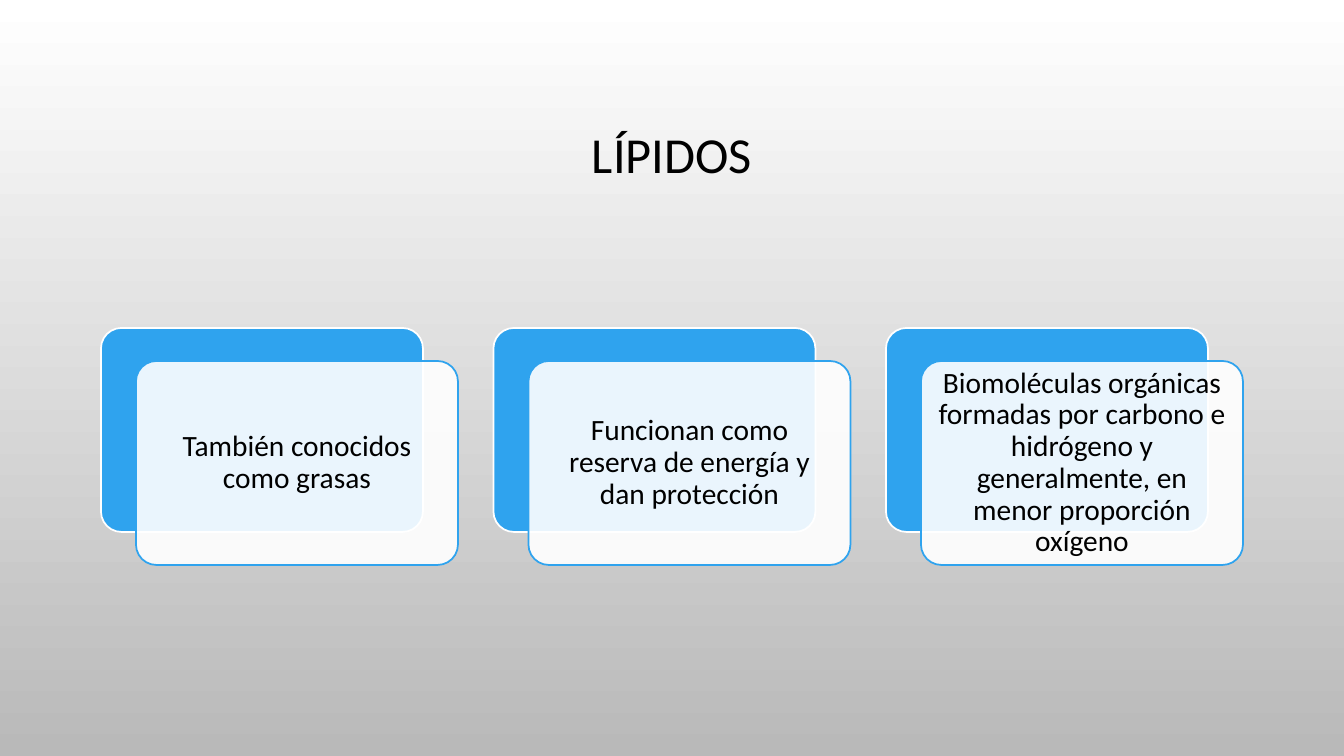
from dataclasses import dataclass

from lxml.etree import SubElement
from pptx import Presentation
from pptx.dml.color import RGBColor
from pptx.enum.shapes import MSO_SHAPE
from pptx.enum.text import MSO_ANCHOR, PP_ALIGN
from pptx.oxml.ns import qn
from pptx.util import Pt

# Content
TITLE = "LÍPIDOS"
CARDS = [
    "También conocidos como grasas",
    "Funcionan como reserva de energía y dan protección",
    "Biomoléculas orgánicas formadas por carbono e hidrógeno y "
    "generalmente, en menor proporción oxígeno",
]


@dataclass(frozen=True)
class Theme:
    font: str = "Calibri"
    title_size: int = 36
    card_size: int = 21
    text: str = "000000"
    accent: str = "2FA3EE"
    white: str = "FFFFFF"
    bg_end: str = "B9B9B9"
    line: float = 1.25
    veil: int = 90


THEME = Theme()

# Layout in px
SLIDE_W, SLIDE_H = 1344, 756
EMU_PER_PX = 12192000 / SLIDE_W
LEFT, ROW_W = 101, 1142
TITLE_TOP, TITLE_H = 69, 176
CARD_TOP, CARD_W, CARD_H = 328, 322, 204
SHIFT_X, SHIFT_Y = 35, 33
TEXT_PAD, INSET = 6, 9
PITCH = (ROW_W - CARD_W - SHIFT_X) / (len(CARDS) - 1)


def px(n):
    return round(n * EMU_PER_PX)


def rgb(color):
    return RGBColor.from_string(color)


def add_text(s, text, x, y, w, h, size, inset=INSET):
    tb = s.shapes.add_textbox(px(x), px(y), px(w), px(h))
    tf = tb.text_frame
    tf.word_wrap = True
    tf.vertical_anchor = MSO_ANCHOR.MIDDLE
    tf.margin_left = tf.margin_right = px(inset)
    tf.margin_top = tf.margin_bottom = px(inset)
    p = tf.paragraphs[0]
    p.alignment = PP_ALIGN.CENTER
    p.line_spacing = 0.9
    r = p.add_run()
    r.text = text
    r.font.name = THEME.font
    r.font.size = Pt(size)
    r.font.color.rgb = rgb(THEME.text)


def add_panel(s, x, y, fill, line, alpha=100):
    sp = s.shapes.add_shape(MSO_SHAPE.ROUNDED_RECTANGLE,
                            px(x), px(y), px(CARD_W), px(CARD_H))
    sp.adjustments[0] = 0.1
    sp.shadow.inherit = False
    sp.fill.solid()
    sp.fill.fore_color.rgb = rgb(fill)
    sp.line.color.rgb = rgb(line)
    sp.line.width = Pt(THEME.line)
    if alpha < 100:
        color = sp.fill._xPr.find(qn("a:solidFill"))[0]
        SubElement(color, qn("a:alpha")).set("val", str(alpha * 1000))


def add_card(s, text, x):
    add_panel(s, x, CARD_TOP, THEME.accent, THEME.white)
    front_x, front_y = x + SHIFT_X, CARD_TOP + SHIFT_Y
    add_panel(s, front_x, front_y, THEME.white, THEME.accent, THEME.veil)
    add_text(s, text, front_x + TEXT_PAD, front_y + TEXT_PAD,
             CARD_W - 2 * TEXT_PAD, CARD_H - 2 * TEXT_PAD, THEME.card_size)


def main():
    prs = Presentation()
    prs.slide_width, prs.slide_height = px(SLIDE_W), px(SLIDE_H)
    s = prs.slides.add_slide(prs.slide_layouts[6])

    # Background, white at the top
    bg = s.background.fill
    bg.gradient()
    bg.gradient_angle = 270
    for stop, color in zip(bg.gradient_stops, (THEME.white, THEME.bg_end)):
        stop.color.rgb = rgb(color)

    # Title
    add_text(s, TITLE, LEFT, TITLE_TOP, ROW_W, TITLE_H, THEME.title_size)

    # Row of cards
    for i, text in enumerate(CARDS):
        add_card(s, text, LEFT + i * PITCH)

    prs.save("out.pptx")


if __name__ == "__main__":
    main()
